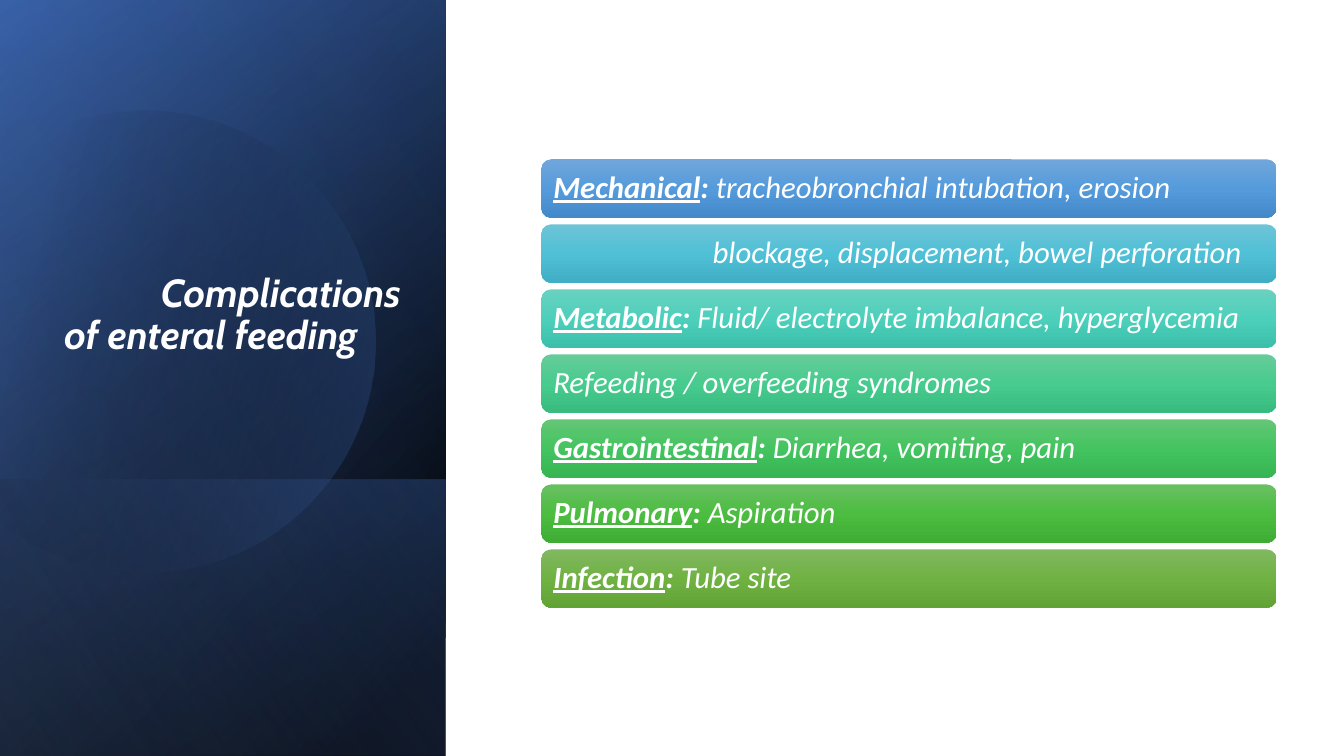
import math
from dataclasses import dataclass

import lxml.etree
import pptx
import pptx.dml.color
import pptx.enum.shapes
import pptx.enum.text
import pptx.oxml.ns
import pptx.util

Inches = pptx.util.Inches
qn = pptx.oxml.ns.qn
Anchor = pptx.enum.text.MSO_ANCHOR
Align = pptx.enum.text.PP_ALIGN
Preset = pptx.enum.shapes.MSO_SHAPE


@dataclass(frozen=True)
class Theme:
    text: str = "FFFFFF"
    black: str = "000000"
    blue: str = "4472C4"
    deep_blue: str = "2F5597"
    pale_blue: str = "8FAADC"
    title_font: str = "Cabin"
    body_font: str = "Calibri"
    title_size: int = 28
    body_size: int = 22
    bars: tuple = (
        ("71A6DB", "559BDB", "448ACA"),
        ("6EC4D6", "50C0D6", "40AFC5"),
        ("6AD1C0", "4CD0BC", "3CC0AC"),
        ("67CC9A", "47CB8E", "39BB7F"),
        ("64C677", "44C460", "36B552"),
        ("69C062", "4CBD41", "3FAD34"),
        ("81B861", "6FB242", "62A336"),
    )


THEME = Theme()

# Heading, text, left indent in inches
COMPLICATIONS = (
    ("Mechanical", "tracheobronchial intubation, erosion", 0),
    ("", "blockage, displacement, bowel perforation", 1.58),
    ("Metabolic", "Fluid/ electrolyte imbalance, hyperglycemia", 0),
    ("", "Refeeding / overfeeding syndromes", 0),
    ("Gastrointestinal", "Diarrhea, vomiting, pain", 0),
    ("Pulmonary", "Aspiration", 0),
    ("Infection", "Tube site", 0),
)


def paint_gradient(shape, stops, angle):
    """Fill a shape without outline; stops are (position %, colour, opacity %)."""
    shape.shadow.inherit = False
    shape.line.fill.background()
    shape.fill.background()
    properties = shape._element.spPr
    gradient = lxml.etree.Element(qn("a:gradFill"), rotWithShape="1")
    stop_list = lxml.etree.SubElement(gradient, qn("a:gsLst"))
    for position, colour, opacity in stops:
        stop = lxml.etree.SubElement(stop_list, qn("a:gs"), pos=str(position * 1000))
        rgb = lxml.etree.SubElement(stop, qn("a:srgbClr"), val=colour)
        if opacity < 100:
            lxml.etree.SubElement(rgb, qn("a:alpha"), val=str(opacity * 1000))
    lxml.etree.SubElement(gradient, qn("a:lin"), ang=str(angle * 60000), scaled="0")
    properties.replace(properties.find(qn("a:noFill")), gradient)


def write_text(frame, runs, *, font, size, align=Align.LEFT, anchor=Anchor.MIDDLE,
               margin=0.1, indent=0, first_indent=0):
    """Write one paragraph of (text, bold, underline) runs, all italic."""
    frame.word_wrap = True
    frame.vertical_anchor = anchor
    frame.margin_left = frame.margin_right = Inches(margin)
    frame.margin_top = frame.margin_bottom = Inches(0.05)
    paragraph = frame.paragraphs[0]
    paragraph.alignment = align
    paragraph.line_spacing = 0.9
    if indent or first_indent:
        settings = paragraph._p.get_or_add_pPr()
        settings.set("marL", str(Inches(indent)))
        settings.set("indent", str(Inches(first_indent)))
    for text, bold, underline in runs:
        run = paragraph.add_run()
        run.text = text
        run.font.name = font
        run.font.size = pptx.util.Pt(size)
        run.font.bold = bold
        run.font.italic = True
        run.font.underline = underline
        run.font.color.rgb = pptx.dml.color.RGBColor.from_string(THEME.text)


def add_turned_panel(slide, left, top, width, height, stops, angle):
    """Cover the given box with a mirrored rectangle turned by a quarter."""
    shift = (width - height) / 2
    panel = slide.shapes.add_shape(
        Preset.RECTANGLE, Inches(left + shift), Inches(top - shift),
        Inches(height), Inches(width))
    panel.rotation = 90
    panel._element.spPr.find(qn("a:xfrm")).set("flipH", "1")
    paint_gradient(panel, stops, angle)


def add_cut_disc(slide, centre_x, centre_y, radius):
    """Draw a disc whose left side is cut off by a straight chord."""
    angles = (-118, -90, 0, 90, 150)
    points = [(Inches(centre_x + radius * math.cos(math.radians(angle))),
               Inches(centre_y + radius * math.sin(math.radians(angle))))
              for angle in angles]
    outline = slide.shapes.build_freeform(*points[0])
    outline.add_line_segments(points[1:], close=True)
    disc = outline.convert_to_shape()
    sides = list(disc._element.spPr.iter(qn("a:lnTo")))
    for side, start, end in zip(sides, angles, angles[1:]):
        arc = lxml.etree.Element(
            qn("a:arcTo"), wR=str(Inches(radius)), hR=str(Inches(radius)),
            stAng=str(start % 360 * 60000), swAng=str((end - start) * 60000))
        side.getparent().replace(side, arc)
    disc.rotation = 343.9
    paint_gradient(disc, ((29, THEME.black, 0), (100, THEME.blue, 43)), 30)


def add_sidebar(slide, left, top, width, height):
    box = (left, top, width, height)
    foot = 2.74
    add_turned_panel(slide, *box, ((8, THEME.black, 100), (100, THEME.deep_blue, 100)), 50)
    add_turned_panel(slide, *box, ((0, THEME.black, 0), (99, THEME.blue, 46)), 30)
    add_turned_panel(slide, left, top + height - foot, width, foot,
                     ((2, THEME.blue, 29), (100, THEME.black, 30)), 130)
    add_cut_disc(slide, left + 1.43, top + 3.35, 2.29)
    add_turned_panel(slide, *box, ((0, THEME.black, 0), (99, THEME.pale_blue, 11)), 120)

    title = slide.shapes.add_textbox(
        Inches(left), Inches(top + 1.84), Inches(4.27), Inches(1.76))
    write_text(title.text_frame, [("Complications of enteral feeding ", True, False)],
               font=THEME.title_font, size=THEME.title_size, align=Align.CENTER,
               anchor=Anchor.BOTTOM, first_indent=1.3)


def add_complications(slide, left, top, width, height):
    bar_height = 0.58
    pitch = (height - bar_height) / (len(COMPLICATIONS) - 1)
    for row, ((heading, text, indent), colours) in enumerate(zip(COMPLICATIONS, THEME.bars)):
        bar = slide.shapes.add_shape(
            Preset.ROUNDED_RECTANGLE, Inches(left), Inches(top + row * pitch),
            Inches(width), Inches(bar_height))
        paint_gradient(bar, [(50 * i, colour, 100) for i, colour in enumerate(colours)], 90)
        runs = [(heading, True, True), (": ", True, False)] if heading else []
        write_text(bar.text_frame, runs + [(text, False, False)], font=THEME.body_font,
                   size=THEME.body_size, margin=0.09, indent=indent)


def main():
    deck = pptx.Presentation()
    deck.slide_width = Inches(13.33)
    deck.slide_height = Inches(7.5)
    slide = deck.slides.add_slide(deck.slide_layouts[6])
    add_sidebar(slide, 0, 0, 4.42, 7.5)
    add_complications(slide, 5.37, 1.58, 7.29, 4.45)
    deck.save("out.pptx")


if __name__ == "__main__":
    main()
